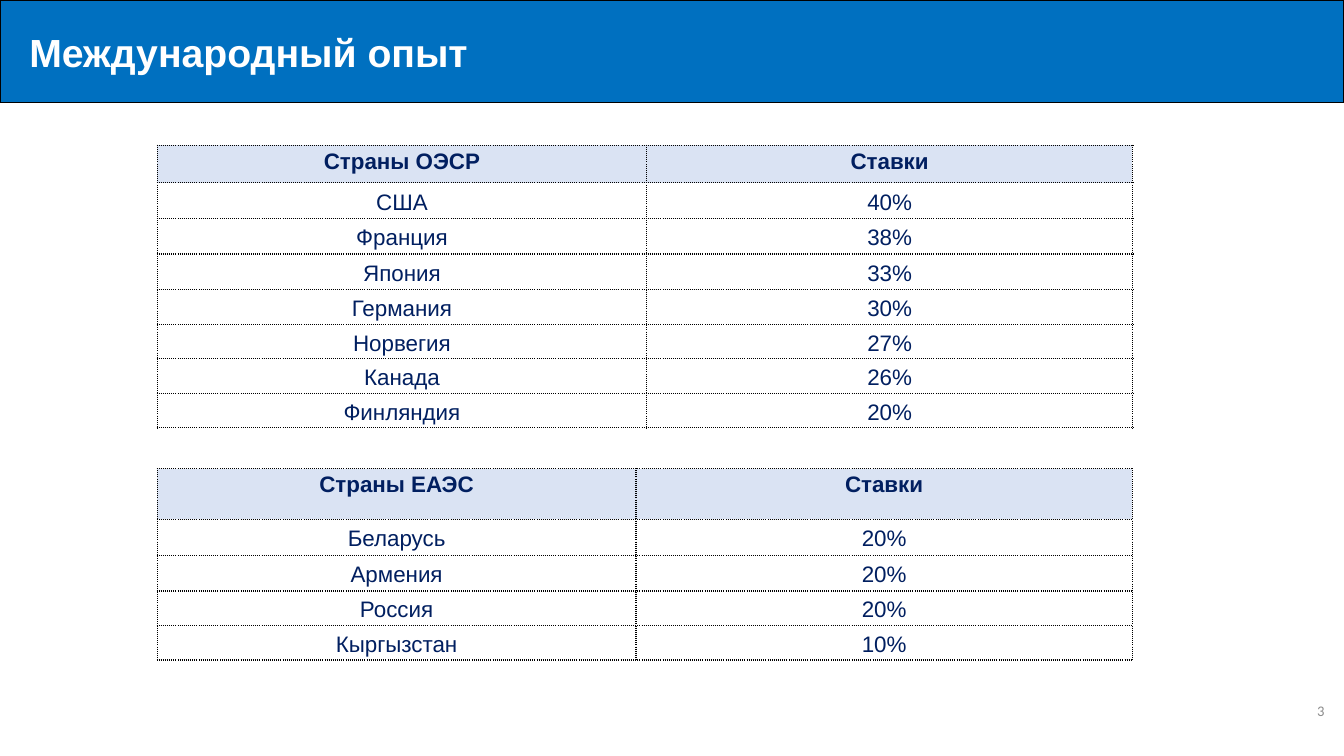
from dataclasses import dataclass

from lxml import etree
from pptx import Presentation
from pptx import util as u
from pptx.dml.color import RGBColor
from pptx.enum import shapes, text
from pptx.oxml import ns


@dataclass(frozen=True)
class Theme:
    banner: str = "0070C0"
    outline: str = "000000"
    title: str = "FFFFFF"
    header: str = "DAE3F3"
    body: str = "FFFFFF"
    ink: str = "011F60"
    muted: str = "8C8C8C"
    font: str = "Arial"
    number_font: str = "Calibri"
    title_size: float = 28
    table_size: float = 16
    number_size: float = 10.5


class SlideBuilder:
    def __init__(self, page, theme):
        self.page = page
        self.theme = theme

    def style(self, paragraph, size, color, bold=False, font=None):
        paragraph.font.name = font or self.theme.font
        paragraph.font.size = u.Pt(size)
        paragraph.font.bold = bold
        paragraph.font.color.rgb = RGBColor.from_string(color)

    def banner(self, title, width, height):
        box = self.page.shapes.add_shape(
            shapes.MSO_SHAPE.RECTANGLE, 0, 0, u.Cm(width), u.Cm(height))
        box.shadow.inherit = False
        box.fill.solid()
        box.fill.fore_color.rgb = RGBColor.from_string(self.theme.banner)
        box.line.color.rgb = RGBColor.from_string(self.theme.outline)
        box.line.width = u.Pt(1)
        frame = box.text_frame
        frame.vertical_anchor = text.MSO_ANCHOR.MIDDLE
        frame.margin_left = u.Cm(0.74)
        frame.text = title
        paragraph = frame.paragraphs[0]
        paragraph.alignment = text.PP_ALIGN.LEFT
        self.style(paragraph, self.theme.title_size, self.theme.title, bold=True)

    def page_number(self, number, left, top, width, height):
        box = self.page.shapes.add_textbox(
            u.Cm(left), u.Cm(top), u.Cm(width), u.Cm(height))
        frame = box.text_frame
        frame.word_wrap = True
        frame.vertical_anchor = text.MSO_ANCHOR.MIDDLE
        frame.text = str(number)
        paragraph = frame.paragraphs[0]
        paragraph.alignment = text.PP_ALIGN.RIGHT
        self.style(paragraph, self.theme.number_size, self.theme.muted,
                   font=self.theme.number_font)

    def border(self, cell):
        properties = cell._tc.get_or_add_tcPr()
        for side in ("lnL", "lnR", "lnT", "lnB"):
            line = etree.SubElement(properties, ns.qn(f"a:{side}"), w=str(u.Pt(1)))
            fill = etree.SubElement(line, ns.qn("a:solidFill"))
            etree.SubElement(fill, ns.qn("a:srgbClr"), val=self.theme.outline)
            etree.SubElement(line, ns.qn("a:prstDash"), val="sysDot")

    def cell(self, cell, value, is_header):
        self.border(cell)
        cell.fill.solid()
        cell.fill.fore_color.rgb = RGBColor.from_string(
            self.theme.header if is_header else self.theme.body)
        cell.margin_left = cell.margin_right = u.Cm(0.18)
        cell.margin_top = cell.margin_bottom = 0
        cell.vertical_anchor = (
            text.MSO_ANCHOR.TOP if is_header else text.MSO_ANCHOR.MIDDLE)
        cell.text = value
        paragraph = cell.text_frame.paragraphs[0]
        paragraph.alignment = text.PP_ALIGN.CENTER
        paragraph.line_spacing = 1.15
        self.style(paragraph, self.theme.table_size, self.theme.ink, bold=is_header)

    def rates(self, rows, left, top, widths, heights):
        frame = self.page.shapes.add_table(
            len(rows), len(widths), u.Cm(left), u.Cm(top),
            u.Cm(sum(widths)), u.Cm(sum(heights)))
        table = frame.table
        table.first_row = table.horz_banding = False
        for column, width in zip(table.columns, widths):
            column.width = u.Cm(width)
        for index, (values, height) in enumerate(zip(rows, heights)):
            table.rows[index].height = u.Cm(height)
            for position, value in enumerate(values):
                self.cell(table.cell(index, position), value, index == 0)


OECD_RATES = [
    ("Страны ОЭСР", "Ставки"),
    ("США", "40%"),
    ("Франция", "38%"),
    ("Япония", "33%"),
    ("Германия", "30%"),
    ("Норвегия", "27%"),
    ("Канада", "26%"),
    ("Финляндия", "20%"),
]
EAEU_RATES = [
    ("Страны ЕАЭС", "Ставки"),
    ("Беларусь", "20%"),
    ("Армения", "20%"),
    ("Россия", "20%"),
    ("Кыргызстан", "10%"),
]


def main():
    deck = Presentation()
    deck.slide_width = u.Cm(33.87)
    deck.slide_height = u.Cm(19.05)
    page = deck.slides.add_slide(deck.slide_layouts[6])
    builder = SlideBuilder(page, Theme())
    builder.banner("Международный опыт", 33.87, 2.59)
    builder.page_number(3, 30.45, 16.99, 3.18, 1.85)
    builder.rates(OECD_RATES, 3.96, 3.66, (12.34, 12.24),
                  [0.94] + [0.9] * 3 + [0.87] * 4)
    builder.rates(EAEU_RATES, 3.96, 11.81, (12.07, 12.5),
                  [1.28] + [0.9] * 2 + [0.87] * 2)
    deck.save("out.pptx")


if __name__ == "__main__":
    main()
